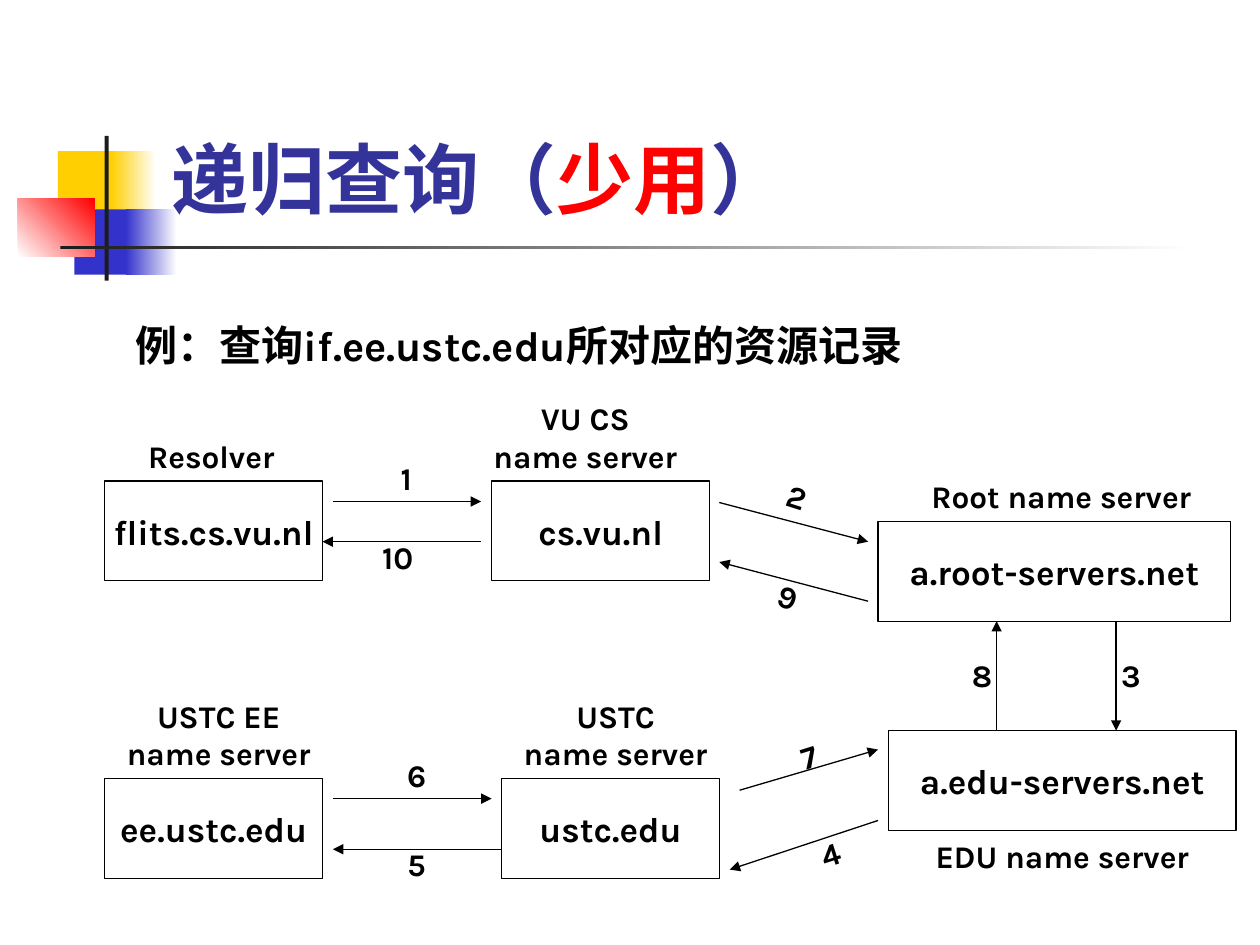
from dataclasses import dataclass

from lxml.etree import SubElement
from pptx import Presentation
from pptx.dml.color import RGBColor
from pptx.enum.shapes import MSO_CONNECTOR as Connector, MSO_SHAPE as Shape
from pptx.enum.text import MSO_ANCHOR as Anchor, PP_ALIGN as Align
from pptx.oxml.ns import qn
from pptx.util import Cm, Pt


@dataclass(frozen=True)
class Theme:
    """Colours, font and type sizes of the slide."""
    font: str = "Karla"
    ink: str = "000000"
    paper: str = "FFFFFF"
    title: str = "333399"
    accent: str = "FF0000"
    yellow: str = "FFCF01"
    blue: str = "3333CC"
    rule: str = "1C1C1C"
    title_size: int = 44
    example_size: int = 24
    host_size: int = 20
    label_size: int = 18
    line_width: float = 0.75


THEME = Theme()
HOST_HEIGHT = 2.01
LINE_HEIGHT = 0.76
LABEL_PADDING = 0.26

ORNAMENT = [
    (1.17, 3.05, 1.22, 1.32, [THEME.yellow], 0),
    (2.24, 3.05, 0.91, 1.32, [THEME.yellow, THEME.paper], 0),
    (1.5, 4.22, 1.17, 1.32, [THEME.blue], 0),
    (2.54, 4.22, 1.02, 1.32, [THEME.blue, THEME.paper], 0),
    (0.36, 4.01, 1.55, 1.17, [THEME.paper, THEME.accent], 45),
    (2.11, 2.74, 0.08, 2.92, [THEME.rule], 0),
    (1.22, 4.95, 22.86, 0.08, [THEME.rule, THEME.paper], 0),
]

SERVERS = [
    ("flits.cs.vu.nl", 2.11, 9.7, 4.4, "Resolver", 2.62, 3.28, "above"),
    ("cs.vu.nl", 9.91, 9.7, 4.4, "VU CS\nname server", 9.3, 5, "above"),
    ("a.root-servers.net", 17.7, 10.52, 7.11, "Root name server", 17.7, 7.39, "above"),
    ("a.edu-servers.net", 17.91, 14.73, 7.01, "EDU name server", 17.91, 7.01, "below"),
    ("ustc.edu", 10.11, 15.7, 4.4, "USTC\nname server", 9.91, 5, "above"),
    ("ee.ustc.edu", 2.11, 15.7, 4.4, "USTC EE\nname server", 1.91, 5, "above"),
]

STEPS = [
    ("1", (6.71, 10.11), (9.7, 10.11), (7.49, 9.12), 0),
    ("2", (14.5, 10.13), (17.5, 10.92), (15.37, 9.5), 17.7),
    ("3", (22.5, 12.52), (22.5, 14.73), (22.1, 13.11), 0),
    ("4", (17.7, 16.54), (14.71, 17.53), (16.05, 16.71), -17.5),
    ("5", (10.11, 17.12), (6.71, 17.12), (7.7, 16.92), 0),
    ("6", (6.71, 16.1), (9.91, 16.1), (7.7, 15.11), 0),
    ("7", (14.91, 15.93), (17.7, 15.11), (15.62, 14.73), -17.5),
    ("8", (20.09, 14.73), (20.09, 12.52), (19.1, 13.11), 0),
    ("9", (17.5, 12.12), (14.5, 11.33), (15.19, 11.51), 17.7),
    ("10", (9.7, 10.92), (6.5, 10.92), (7.32, 10.72), 0),
]


def rgb(colour):
    """Turn a hex string into a colour."""
    return RGBColor.from_string(colour)


def write_run(paragraph, words, size, colour):
    """Add one bold run to a paragraph."""
    run = paragraph.add_run()
    run.text = words
    run.font.name = THEME.font
    run.font.size = Pt(size)
    run.font.bold = True
    run.font.color.rgb = rgb(colour)


def add_text(slide, place, runs, size, align=Align.LEFT, anchor=Anchor.TOP, wrap=True):
    """Add a text box whose runs are pairs of words and colour."""
    holder = slide.shapes.add_textbox(*map(Cm, place))
    frame = holder.text_frame
    frame.word_wrap = wrap
    frame.vertical_anchor = anchor
    paragraph = frame.paragraphs[0]
    paragraph.alignment = align
    for words, colour in runs:
        for number, line in enumerate(words.split("\n")):
            if number:
                paragraph.add_line_break()
            write_run(paragraph, line, size, colour)
    return holder


def add_block(slide, place, colours, angle=0):
    """Add a borderless rectangle in one colour or a two-colour gradient."""
    block = slide.shapes.add_shape(Shape.RECTANGLE, *map(Cm, place))
    block.shadow.inherit = False
    block.line.fill.background()
    if len(colours) == 1:
        block.fill.solid()
        block.fill.fore_color.rgb = rgb(colours[0])
    else:
        block.fill.gradient()
        block.fill.gradient_angle = angle
        for stop, colour in zip(block.fill.gradient_stops, colours):
            stop.color.rgb = rgb(colour)
    return block


def add_server(slide, host, left, top, width, role, role_left, role_width, side):
    """Add a host rectangle with its role written above or below it."""
    server = add_block(slide, (left, top, width, HOST_HEIGHT), [THEME.paper])
    server.line.color.rgb = rgb(THEME.ink)
    server.line.width = Pt(THEME.line_width)
    server.text_frame.word_wrap = False
    server.text_frame.vertical_anchor = Anchor.MIDDLE
    paragraph = server.text_frame.paragraphs[0]
    paragraph.alignment = Align.CENTER
    write_run(paragraph, host, THEME.host_size, THEME.ink)

    role_height = LINE_HEIGHT * len(role.split("\n")) + LABEL_PADDING
    role_top = top - role_height if side == "above" else top + HOST_HEIGHT
    add_text(slide, (role_left, role_top, role_width, role_height),
             [(role, THEME.ink)], THEME.label_size, Align.CENTER)


def add_step(slide, number, start, end, label_at, tilt):
    """Add a numbered arrow of the query sequence."""
    arrow = slide.shapes.add_connector(Connector.STRAIGHT, *map(Cm, start + end))
    arrow.line.color.rgb = rgb(THEME.ink)
    arrow.line.width = Pt(THEME.line_width)
    SubElement(arrow.line._get_or_add_ln(), qn("a:tailEnd"), type="triangle")
    SubElement(arrow._element.spPr, qn("a:effectLst"))

    label = add_text(slide, (*label_at, 1.4, LINE_HEIGHT + LABEL_PADDING),
                     [(number, THEME.ink)], THEME.label_size, Align.CENTER)
    label.rotation = tilt


def main():
    """Build the recursive query slide."""
    deck = Presentation()
    deck.slide_width, deck.slide_height = Cm(25.4), Cm(19.05)
    slide = deck.slides.add_slide(deck.slide_layouts[6])

    for *place, colours, angle in ORNAMENT:
        add_block(slide, place, colours, angle)
    heading = [("递归查询（", THEME.title), ("少用", THEME.accent), ("）", THEME.title)]
    add_text(slide, (3.2, 0.58, 21.64, 4.06), heading, THEME.title_size,
             anchor=Anchor.BOTTOM)
    add_text(slide, (2.49, 6.32, 16.46, 1.27),
             [("例：查询if.ee.ustc.edu所对应的资源记录", THEME.ink)],
             THEME.example_size, wrap=False)
    for server in SERVERS:
        add_server(slide, *server)
    for step in STEPS:
        add_step(slide, *step)

    deck.save("out.pptx")


if __name__ == "__main__":
    main()
